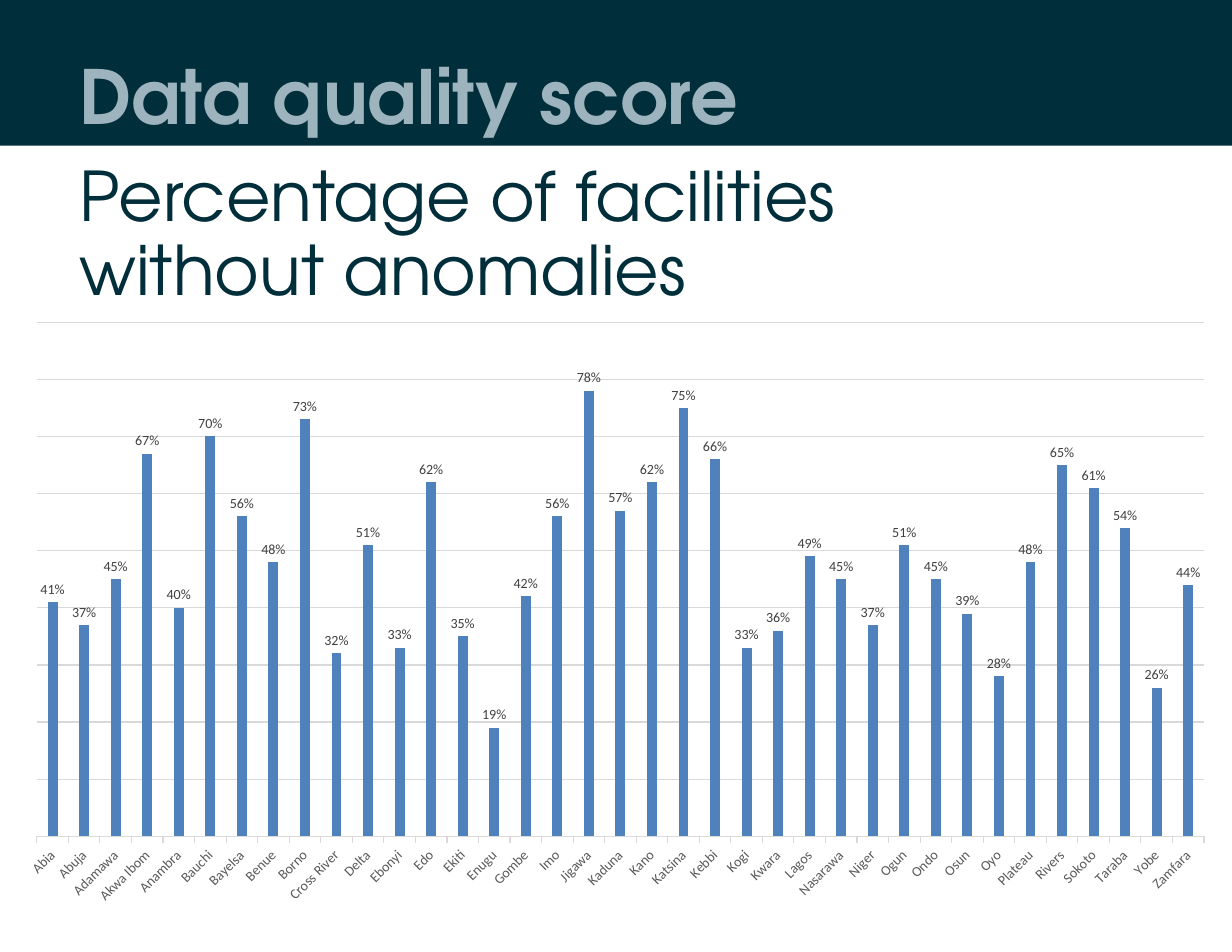
from typing import NamedTuple

from lxml.etree import SubElement
from pptx import Presentation
from pptx.chart.data import CategoryChartData
from pptx.dml.color import RGBColor
from pptx.enum.chart import XL_CHART_TYPE as ChartType
from pptx.enum.chart import XL_LABEL_POSITION as LabelPosition
from pptx.enum.chart import XL_TICK_LABEL_POSITION as TickLabelPosition
from pptx.enum.chart import XL_TICK_MARK as TickMark
from pptx.enum.shapes import MSO_SHAPE as Shape
from pptx.oxml.ns import qn
from pptx.util import Inches, Pt

COLORS = {
    "band": "002E3A",
    "title": "9DB4BE",
    "bar": "4F81BD",
    "grid": "D9D9D9",
    "axis_text": "595959",
    "label": "404040",
    "chart_text": "000000",
}
HEADING_FONT = "TeX Gyre Adventor"
CHART_FONT = "Calibri"
PLOT_LAYOUT = {"x": 0.03, "y": 0.02, "w": 0.95, "h": 0.85}
SCORES = {
    "Abia": 41, "Abuja": 37, "Adamawa": 45, "Akwa Ibom": 67, "Anambra": 40,
    "Bauchi": 70, "Bayelsa": 56, "Benue": 48, "Borno": 73, "Cross River": 32,
    "Delta": 51, "Ebonyi": 33, "Edo": 62, "Ekiti": 35, "Enugu": 19,
    "Gombe": 42, "Imo": 56, "Jigawa": 78, "Kaduna": 57, "Kano": 62,
    "Katsina": 75, "Kebbi": 66, "Kogi": 33, "Kwara": 36, "Lagos": 49,
    "Nasarawa": 45, "Niger": 37, "Ogun": 51, "Ondo": 45, "Osun": 39,
    "Oyo": 28, "Plateau": 48, "Rivers": 65, "Sokoto": 61, "Taraba": 54,
    "Yobe": 26, "Zamfara": 44,
}


class Heading(NamedTuple):
    """A line of display text with its place and style."""

    text: str
    left: float
    top: float
    width: float
    height: float
    size: int
    color: str
    bold: bool
    spacing: int | None


HEADINGS = [
    Heading("Data quality score", 0.61, 0.4, 9.54, 1.25, 48, "title", True, None),
    Heading("Percentage of facilities \vwithout anomalies",
            0.61, 1.38, 10.33, 0.75, 44, "band", False, 48),
]


def rgb(key: str) -> RGBColor:
    """Return the named colour."""
    return RGBColor.from_string(COLORS[key])


def style_font(font, name: str, size: int, color: str, bold: bool = False) -> None:
    """Set typeface, size, colour and weight."""
    font.name = name
    font.size = Pt(size)
    font.bold = bold
    font.color.rgb = rgb(color)


def style_line(line, color: str) -> None:
    """Give a chart line its colour and hairline width."""
    line.color.rgb = rgb(color)
    line.width = Pt(0.75)


def add_band(slide) -> None:
    """Draw the dark band across the top."""
    band = slide.shapes.add_shape(Shape.RECTANGLE, 0, 0, Inches(11), Inches(1.3))
    band.shadow.inherit = False
    band.fill.solid()
    band.fill.fore_color.rgb = rgb("band")
    band.line.fill.background()


def add_heading(slide, heading: Heading) -> None:
    """Place one heading."""
    box = slide.shapes.add_textbox(
        Inches(heading.left), Inches(heading.top),
        Inches(heading.width), Inches(heading.height))
    box.text_frame.word_wrap = True
    paragraph = box.text_frame.paragraphs[0]
    paragraph.text = heading.text
    if heading.spacing:
        paragraph.line_spacing = Pt(heading.spacing)
    style_font(paragraph.font, HEADING_FONT, heading.size, heading.color, heading.bold)


def fix_plot_layout(chart) -> None:
    """Pin the inner plot area to fractions of the chart."""
    plot_area = chart._chartSpace.chart.plotArea
    layout = plot_area.find(qn("c:layout"))
    if layout is None:
        layout = SubElement(plot_area, qn("c:layout"))
        plot_area.insert(0, layout)
    manual = SubElement(layout, qn("c:manualLayout"))
    settings = {"layoutTarget": "inner", "xMode": "edge", "yMode": "edge", **PLOT_LAYOUT}
    for tag, value in settings.items():
        SubElement(manual, qn(f"c:{tag}")).set("val", str(value))


def style_axes(chart) -> None:
    """Slant the state names and keep only gridlines for the values."""
    states = chart.category_axis
    states.major_tick_mark = TickMark.OUTSIDE
    states.minor_tick_mark = TickMark.NONE
    states.tick_label_position = TickLabelPosition.LOW
    style_line(states.format.line, "grid")
    style_font(states.tick_labels.font, CHART_FONT, 9, "axis_text")
    states._element.txPr.find(qn("a:bodyPr")).set("rot", "-2700000")

    percent = chart.value_axis
    percent.minimum_scale = 0
    percent.maximum_scale = 0.9
    percent.major_unit = 0.1
    percent.has_major_gridlines = True
    style_line(percent.major_gridlines.format.line, "grid")
    percent.tick_labels.number_format = "0%"
    percent.tick_labels.number_format_is_linked = False
    percent.visible = False


def style_bars(plot) -> None:
    """Colour the bars and label their values."""
    plot.vary_by_categories = False
    plot.gap_width = 219
    plot.overlap = -27
    scores = plot.series[0]
    scores.format.fill.solid()
    scores.format.fill.fore_color.rgb = rgb("bar")
    labels = scores.data_labels
    labels.show_value = True
    labels.position = LabelPosition.OUTSIDE_END
    labels.number_format = "0%"
    labels.number_format_is_linked = False
    style_font(labels.font, CHART_FONT, 9, "label")


def add_score_chart(slide) -> None:
    """Chart the score of every state."""
    data = CategoryChartData(number_format="0%")
    data.categories = list(SCORES)
    data.add_series("Series 1", [score / 100 for score in SCORES.values()])
    chart = slide.shapes.add_chart(
        ChartType.COLUMN_CLUSTERED, 0, Inches(2.77), Inches(10.97), Inches(5.4), data).chart
    chart.has_legend = False
    chart.has_title = False
    style_font(chart.font, CHART_FONT, 10, "chart_text")
    fix_plot_layout(chart)
    style_axes(chart)
    style_bars(chart.plots[0])


def main() -> None:
    """Build and save the slide."""
    deck = Presentation()
    deck.slide_width = Inches(11)
    deck.slide_height = Inches(8.5)
    slide = deck.slides.add_slide(deck.slide_layouts[6])
    add_band(slide)
    add_score_chart(slide)
    for heading in HEADINGS:
        add_heading(slide, heading)
    deck.save("out.pptx")


if __name__ == "__main__":
    main()
